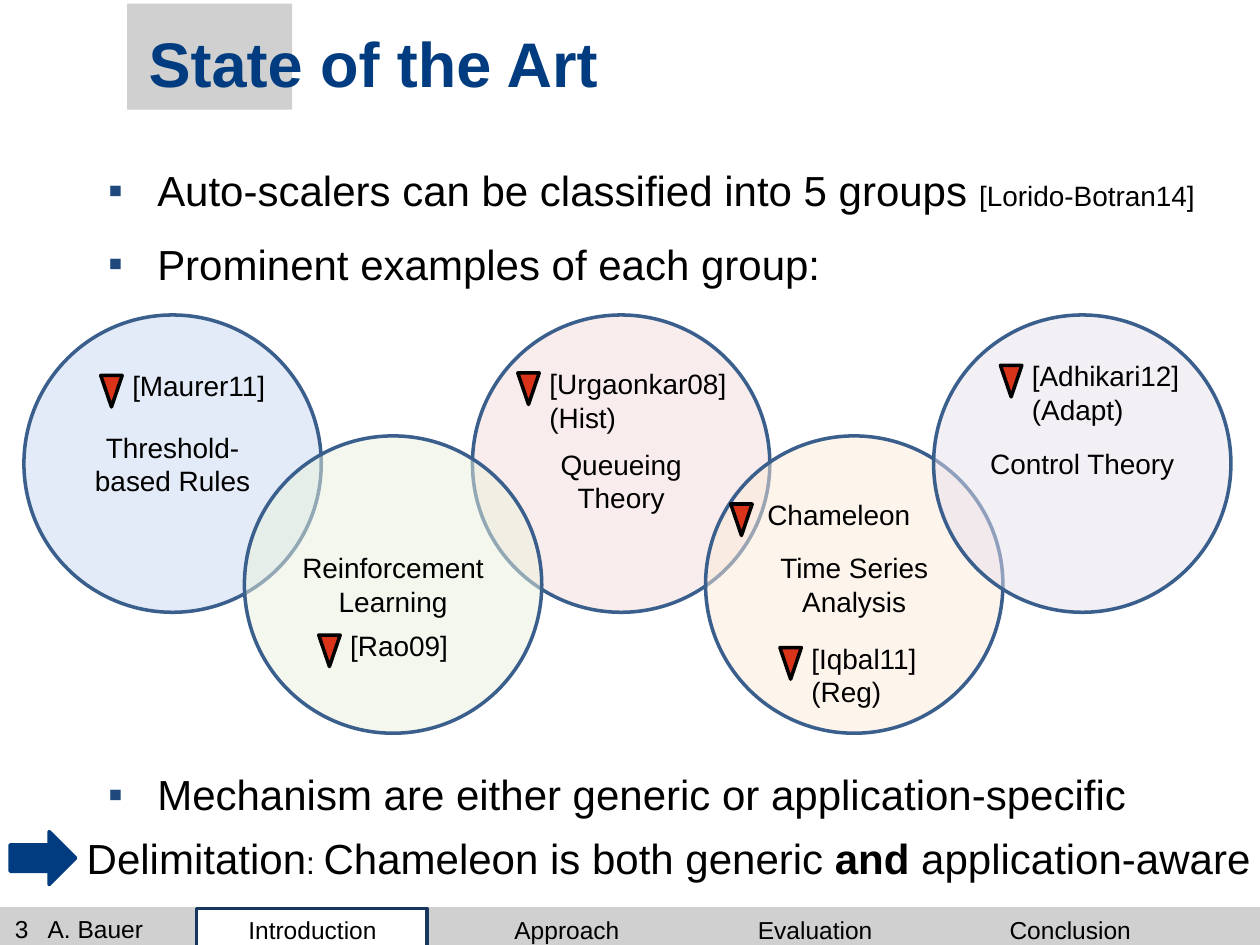
from lxml import etree
from pptx import Presentation
from pptx.dml.color import RGBColor
from pptx.enum.shapes import MSO_SHAPE
from pptx.enum.text import MSO_ANCHOR, MSO_AUTO_SIZE, PP_ALIGN
from pptx.oxml.ns import qn
from pptx.util import Inches, Pt

RECTANGLE, OVAL = MSO_SHAPE.RECTANGLE, MSO_SHAPE.OVAL
TRIANGLE, ARROW = MSO_SHAPE.FLOWCHART_MERGE, MSO_SHAPE.RIGHT_ARROW
LEFT, CENTER = PP_ALIGN.LEFT, PP_ALIGN.CENTER
MIDDLE = MSO_ANCHOR.MIDDLE
FIT_SHAPE = MSO_AUTO_SIZE.SHAPE_TO_FIT_TEXT

NAVY, GREY, BLACK, WHITE = "003C7F", "D0D0D0", "000000", "FFFFFF"
DIAMETER = 2.36
UPPER, LOWER = 2.5, 3.46

# left, top, fill, label, extra top inset
GROUPS = [
    (0.19, UPPER, "C6D9F1", "Threshold-based Rules", 0),
    (3.75, UPPER, "F2DCDB", "Queueing Theory", 0.27),
    (5.6, LOWER, "FDEADA", "Time Series Analysis", 0),
    (1.94, LOWER, "EBF1DE", "Reinforcement Learning", 0),
    (7.41, UPPER, "E6E0EC", "Control Theory", 0),
]
# left, top, text lines, label width, gap from marker to label
EXAMPLES = [
    (0.8, 2.98, ["[Maurer11]"], 1.34, 0.08),
    (2.53, 5.04, ["[Rao09]"], 1.06, 0.08),
    (4.11, 2.96, ["[Urgaonkar08]", "(Hist)"], 1.69, 0.08),
    (7.94, 2.9, ["[Adhikari12]", "(Adapt)"], 1.46, 0.08),
    (6.19, 5.14, ["[Iqbal11]", "(Reg)"], 1.11, 0.08),
    (5.8, 4, ["Chameleon"], 1.42, 0.12),
]
SECTIONS = [
    ("Introduction", 1.87, 1.22),
    ("Approach", 3.98, 1.04),
    ("Evaluation", 5.91, 1.12),
    ("Conclusion", 7.91, 1.17),
]


def rgb(value):
    """Turn a hex string into a colour."""
    return RGBColor.from_string(value)


def style(font, size, color=BLACK, bold=None):
    """Set the typeface, size and colour of a font."""
    font.name, font.size, font.bold = "Arial", Pt(size), bold
    font.color.rgb = rgb(color)


def add_figure(slide, kind, box, fill, line=None, alpha=None):
    """Add a filled preset shape, optionally outlined and translucent."""
    figure = slide.shapes.add_shape(kind, *map(Inches, box))
    figure.shadow.inherit = False
    figure.fill.solid()
    figure.fill.fore_color.rgb = rgb(fill)
    if alpha:
        color = figure.element.spPr.find(f"{qn('a:solidFill')}/{qn('a:srgbClr')}")
        etree.SubElement(color, qn("a:alpha"), val=str(alpha * 1000))
    if line:
        figure.line.color.rgb = rgb(line)
        figure.line.width = Pt(2)
    else:
        figure.line.fill.background()
    return figure


def add_text(slide, box, lines, size, align=LEFT, wrap=False):
    """Add a text box with one paragraph per line and return its frame."""
    frame = slide.shapes.add_textbox(*map(Inches, box)).text_frame
    frame.word_wrap = wrap
    if not wrap:
        frame.auto_size = FIT_SHAPE
    frame.text = "\n".join(lines)
    for paragraph in frame.paragraphs:
        paragraph.alignment = align
        style(paragraph.font, size)
    return frame


def add_runs(paragraph, runs):
    """Append runs given as text, size and weight."""
    for text, size, bold in runs:
        run = paragraph.add_run()
        run.text = text
        style(run.font, size, bold=bold)


def add_bullets(slide, top, items):
    """Add square-bulleted paragraphs, each given as a list of runs."""
    frame = slide.shapes.add_textbox(
        Inches(0.76), Inches(top), Inches(8.86), Inches(0.5 * len(items))).text_frame
    frame.word_wrap = True
    for index, runs in enumerate(items):
        paragraph = frame.add_paragraph() if index else frame.paragraphs[0]
        properties = paragraph._p.get_or_add_pPr()
        properties.set("marL", str(Inches(0.39)))
        properties.set("indent", str(-Inches(0.39)))
        color = etree.SubElement(properties, qn("a:buClr"))
        etree.SubElement(color, qn("a:srgbClr"), val="1F497D")
        etree.SubElement(properties, qn("a:buFont"), typeface="Arial")
        etree.SubElement(properties, qn("a:buChar"), char="▪")
        if index:
            paragraph.space_before = Pt(13)
        add_runs(paragraph, runs)


def add_title(slide):
    """Place the title in front of its grey square."""
    add_figure(slide, RECTANGLE, (1.01, 0.03, 1.31, 0.84), GREY)
    title = slide.shapes.title
    title.element.getparent().append(title.element)
    title.left, title.top = Inches(1.08), Inches(0.26)
    title.width, title.height = Inches(8.92), Inches(0.47)
    frame = title.text_frame
    frame.text = "State of the Art"
    frame.vertical_anchor = MIDDLE
    frame.paragraphs[0].alignment = LEFT
    style(frame.paragraphs[0].font, 36, NAVY, True)


def add_group(slide, left, top, fill, label, inset):
    """Add the translucent circle of one auto-scaler group."""
    circle = add_figure(slide, OVAL, (left, top, DIAMETER, DIAMETER), fill, "3A5F8C", 50)
    frame = circle.text_frame
    frame.word_wrap = True
    frame.vertical_anchor = MIDDLE
    frame.margin_top = Inches(0.05 + inset)
    frame.text = label
    frame.paragraphs[0].alignment = CENTER
    style(frame.paragraphs[0].font, 16)


def add_example(slide, left, top, lines, width, gap):
    """Add a red marker with the name of an example beside it."""
    add_figure(slide, TRIANGLE, (left, top, 0.17, 0.25), "D93419", BLACK)
    height = 0.1 + 0.27 * len(lines)
    frame = add_text(slide, (left + gap, top - 0.1, width, height), lines, 16)
    frame.margin_left = Inches(0.17)


def add_footer(slide):
    """Add the author and the section names, with the current one framed."""
    author = add_text(slide, (0.02, 7.25, 1.57, 0.24), [], 14, wrap=True)
    author.vertical_anchor = MIDDLE
    paragraph = author.paragraphs[0]
    tabs = etree.Element(qn("a:tabLst"))
    etree.SubElement(tabs, qn("a:tab"), pos=str(Inches(0.26)), algn="l")
    paragraph._p.get_or_add_pPr().insert(0, tabs)
    paragraph.text = "3\tA. Bauer"
    add_figure(slide, RECTANGLE, (1.56, 7.21, 1.83, 0.32), WHITE, "17375E")
    for name, left, width in SECTIONS:
        add_text(slide, (left, 7.21, width, 0.34), [name], 14, CENTER)


def main():
    """Build the slide and save it."""
    deck = Presentation()
    deck.slide_width, deck.slide_height = Inches(10), Inches(7.5)
    slide = deck.slides.add_slide(deck.slide_layouts[5])
    add_figure(slide, RECTANGLE, (0, 7.2, 10, 0.33), GREY)
    add_title(slide)
    add_bullets(slide, 1.26, [
        [("Auto-scalers can be classified into 5 groups ", 24, None),
         ("[Lorido-Botran14]", 16, None)],
        [("Prominent examples of each group:", 24, None)],
    ])
    for group in GROUPS:
        add_group(slide, *group)
    for example in EXAMPLES:
        add_example(slide, *example)
    add_bullets(slide, 6.05, [
        [("Mechanism are either generic or application-specific", 24, None)],
    ])
    add_figure(slide, ARROW, (0.08, 6.6, 0.52, 0.42), NAVY, NAVY)
    delimitation = add_text(slide, (0.59, 6.56, 9.54, 0.5), [], 24)
    add_runs(delimitation.paragraphs[0], [
        ("Delimitation", 24, None),
        (": ", 18, None),
        ("Chameleon is both generic ", 24, None),
        ("and", 24, True),
        (" application-aware", 24, None),
    ])
    add_footer(slide)
    deck.save("out.pptx")


if __name__ == "__main__":
    main()
